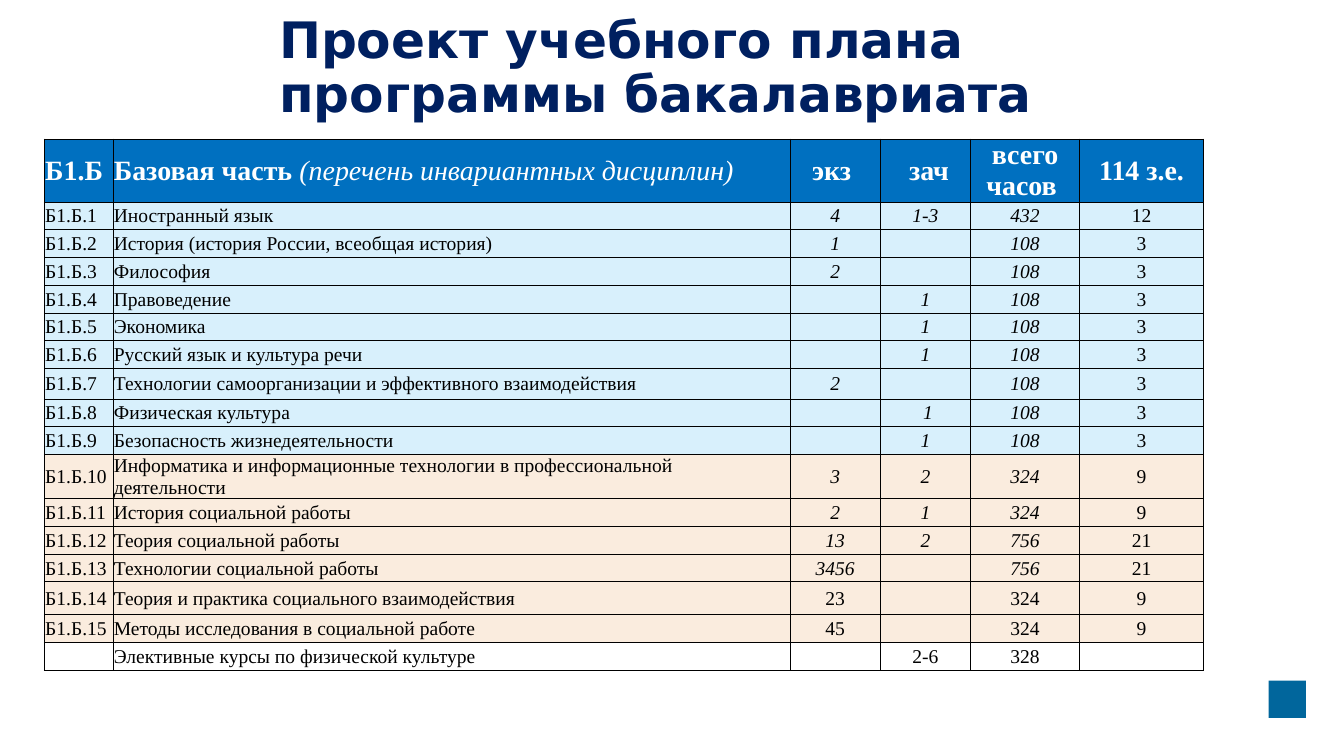
from typing import NamedTuple, Optional

from lxml.etree import SubElement
from pptx import Presentation
from pptx.dml.color import RGBColor as RGB
from pptx.enum.shapes import MSO_SHAPE as Shape
from pptx.enum.text import MSO_ANCHOR as Anchor, MSO_AUTO_SIZE as Fit, PP_ALIGN as Align
from pptx.oxml import parse_xml
from pptx.oxml.ns import nsdecls, qn
from pptx.util import Inches, Pt

WIDE, HIGH = Inches(13.39), Inches(7.48)
NAVY = RGB(0x00, 0x20, 0x60)
BLUE = RGB(0x00, 0x70, 0xC0)
TEAL = RGB(0x01, 0x66, 0x9C)
SKY = RGB(0xD8, 0xF0, 0xFC)
SAND = RGB(0xFA, 0xEC, 0xDE)
WHITE = RGB(0xFF, 0xFF, 0xFF)
BLACK = RGB(0x00, 0x00, 0x00)
SERIF = "Times New Roman"

# Shares of the slide, in percent
COLS = (5.11, 50.37, 6.75, 6.7, 8.12, 9.22)
HEAD_ROW, ROW = 7.35, 3.7


class Course(NamedTuple):
    name: str
    exam: str
    test: str
    hours: str
    units: str
    fill: Optional[RGB] = SKY
    slant: bool = True
    row: float = ROW


class Look(NamedTuple):
    size: int
    color: RGB
    bold: bool
    fill: Optional[RGB]


HEAD = ("Б1.Б", "Базовая часть ", "экз ", " зач", "всего часов ", "114 з.е.")
HINT = "(перечень инвариантных дисциплин)"
COURSES = (
    Course("Иностранный язык", "4", "1-3", "432", "12"),
    Course("История (история России, всеобщая история)", "1", "", "108", "3"),
    Course("Философия", "2", "", "108", "3"),
    Course("Правоведение", "", "1", "108", "3"),
    Course("Экономика", "", "1", "108", "3"),
    Course("Русский язык и культура речи", "", "1", "108", "3"),
    Course("Технологии самоорганизации и эффективного взаимодействия",
           "2", "", "108", "3", row=4.06),
    Course("Физическая культура", "", " 1", "108", "3"),
    Course("Безопасность жизнедеятельности", "", "1", "108", "3"),
    Course("Информатика и информационные технологии в профессиональной деятельности",
           "3", "2", "324", "9", SAND),
    Course("История социальной работы", "2", "1", "324", "9", SAND),
    Course("Теория социальной работы", "13", "2", "756", "21", SAND),
    Course("Технологии социальной работы", "3456", "", "756", "21", SAND),
    Course("Теория и практика социального взаимодействия",
           "23", "", "324", "9", SAND, False, 4.4),
    Course("Методы исследования в социальной работе", "45", "", "324", "9", SAND, False),
    Course("Элективные курсы по физической культуре", "", "2-6", "328", "", None, False),
)


def across(share: float) -> int:
    return round(WIDE * share / 100)


def down(share: float) -> int:
    return round(HIGH * share / 100)


def style(font, name: str, size: int, color: RGB, bold: bool, slant: bool = False) -> None:
    font.name, font.size, font.bold, font.italic = name, Pt(size), bold, slant
    font.color.rgb = color


def edge(cell) -> None:
    """Give the cell thin black borders, placed before its fill as the schema asks."""
    props = cell._tc.get_or_add_tcPr()
    for i, side in enumerate("LRTB"):
        props.insert(i, parse_xml(
            f'<a:ln{side} {nsdecls("a")} w="{Pt(0.5)}"><a:solidFill>'
            f'<a:srgbClr val="{BLACK}"/></a:solidFill></a:ln{side}>'))


def put(cell, text: str, look: Look, center: bool, slant: bool = False) -> None:
    cell.margin_left = cell.margin_right = cell.margin_top = Inches(0.01)
    cell.margin_bottom = 0
    cell.vertical_anchor = Anchor.MIDDLE
    if look.fill is None:
        cell.fill.background()
    else:
        cell.fill.solid()
        cell.fill.fore_color.rgb = look.fill
    edge(cell)
    cell.text_frame.text = text
    para = cell.text_frame.paragraphs[0]
    para.alignment = Align.CENTER if center else Align.LEFT
    for run in para.runs:
        style(run.font, SERIF, look.size, look.color, look.bold, slant)
    if not text:
        SubElement(para._p, qn("a:endParaRPr"), sz=str(look.size * 100))


def add_title(slide) -> None:
    title = slide.shapes.title
    title.left, title.top = across(19.87), down(1.2)
    title.width, title.height = across(69.31), down(9.89)
    frame = title.text_frame
    frame.text = "Проект учебного плана программы бакалавриата"
    frame.word_wrap, frame.auto_size = True, Fit.NONE
    frame.vertical_anchor = Anchor.TOP
    frame.margin_left = frame.margin_right = Inches(0.12)
    frame.margin_top = frame.margin_bottom = Inches(0.06)
    para = frame.paragraphs[0]
    para.alignment, para.line_spacing = Align.LEFT, 0.9
    style(para.runs[0].font, "DejaVu Sans", 36, NAVY, True)


def add_plan(slide) -> None:
    rows = (HEAD_ROW, *(course.row for course in COURSES))
    table = slide.shapes.add_table(
        len(rows), len(COLS), across(3.29), down(18.5),
        across(sum(COLS)), down(sum(rows))).table
    table.first_row = table.horz_banding = False
    for col, share in zip(table.columns, COLS):
        col.width = across(share)
    for row, share in zip(table.rows, rows):
        row.height = down(share)

    top = Look(20, WHITE, True, BLUE)
    for c, text in enumerate(HEAD):
        put(table.cell(0, c), text, top, c > 1)
    hint = table.cell(0, 1).text_frame.paragraphs[0].add_run()
    hint.text = HINT
    style(hint.font, SERIF, 20, WHITE, False, True)

    for r, course in enumerate(COURSES, 1):
        look = Look(14, BLACK, False, course.fill)
        code = f"Б1.Б.{r}" if course.fill else ""
        for c, text in enumerate((code, *course[:5])):
            put(table.cell(r, c), text, look, c > 1, course.slant and c in (2, 3, 4))


def add_mark(slide) -> None:
    mark = slide.shapes.add_shape(
        Shape.RECTANGLE, across(94.4), down(90.64), across(2.76), down(4.95))
    mark.shadow.inherit = False
    mark.fill.solid()
    mark.fill.fore_color.rgb = TEAL
    mark.line.fill.background()


def main() -> None:
    deck = Presentation()
    deck.slide_width, deck.slide_height = WIDE, HIGH
    slide = deck.slides.add_slide(deck.slide_layouts[5])
    add_mark(slide)
    add_title(slide)
    add_plan(slide)
    deck.save("out.pptx")


if __name__ == "__main__":
    main()
